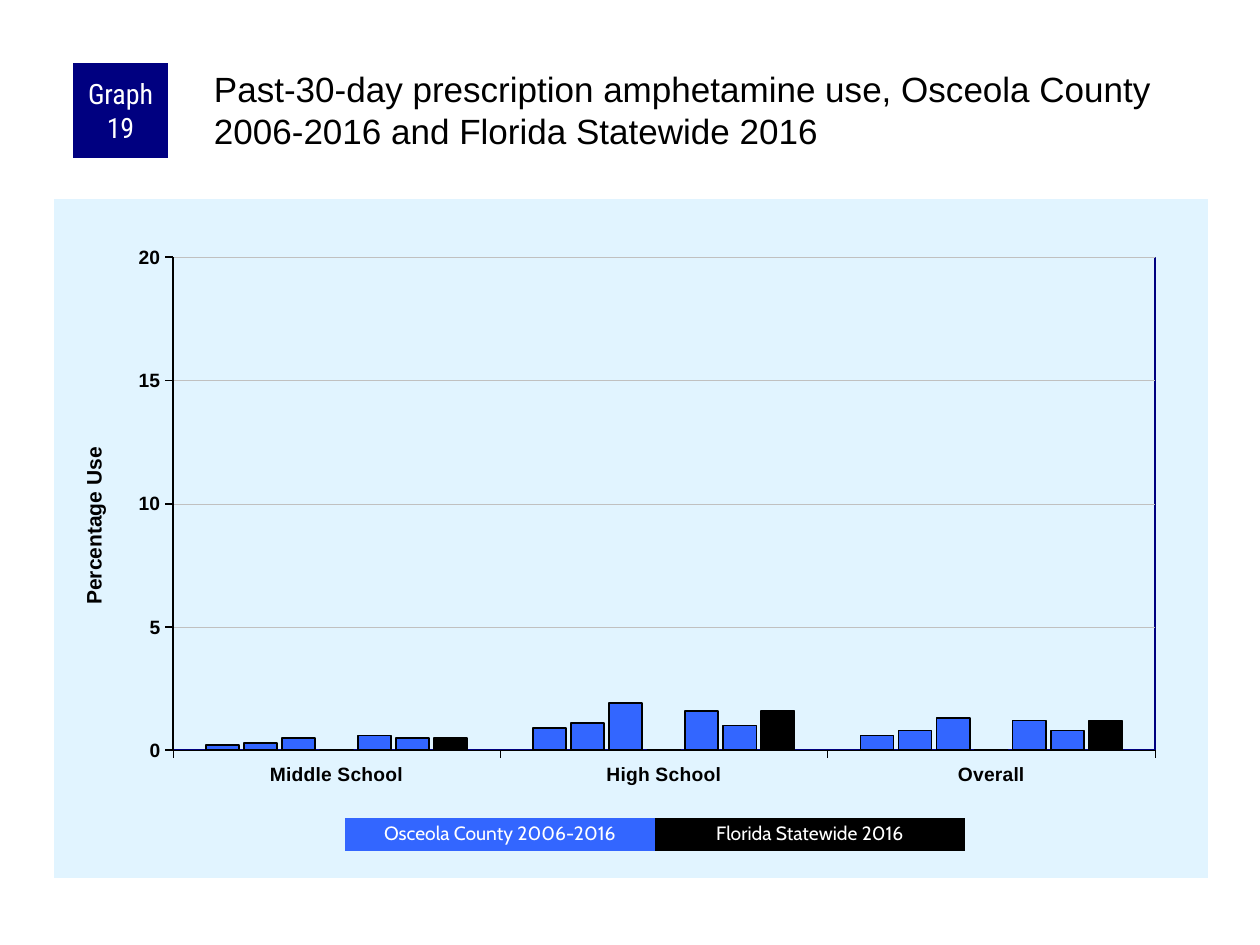
from lxml import etree
from pptx import Presentation
from pptx.chart.data import CategoryChartData
from pptx.dml.color import RGBColor
from pptx.enum.chart import XL_CHART_TYPE, XL_TICK_MARK
from pptx.enum.shapes import MSO_SHAPE
from pptx.enum.text import MSO_ANCHOR, PP_ALIGN
from pptx.oxml import parse_xml
from pptx.oxml.ns import nsdecls, qn
from pptx.util import Pt

COLUMN = XL_CHART_TYPE.COLUMN_CLUSTERED
OUTSIDE = XL_TICK_MARK.OUTSIDE
RECT = MSO_SHAPE.RECTANGLE
MIDDLE = MSO_ANCHOR.MIDDLE
CENTER = PP_ALIGN.CENTER

BLACK = RGBColor(0x00, 0x00, 0x00)
WHITE = RGBColor(0xFF, 0xFF, 0xFF)
NAVY = RGBColor(0x00, 0x00, 0x80)
BLUE = RGBColor(0x33, 0x66, 0xFF)
PALE = RGBColor(0xE1, 0xF4, 0xFF)
GRAY = RGBColor(0xC0, 0xC0, 0xC0)

TITLE = ("Past-30-day prescription amphetamine use, Osceola County "
         "2006-2016 and Florida Statewide 2016")
CATEGORIES = ["Middle School", "High School", "Overall"]
SERIES = [
    ((0.2, 0.9, 0.6), BLUE),
    ((0.3, 1.1, 0.8), BLUE),
    ((0.5, 1.9, 1.3), BLUE),
    ((0, 0, 0), BLUE),
    ((0.6, 1.6, 1.2), BLUE),
    ((0.5, 1.0, 0.8), BLUE),
    ((0.5, 1.6, 1.2), BLACK),
]
LEGEND = [("Osceola County 2006-2016", BLUE), ("Florida Statewide 2016", BLACK)]
LEGEND_LEFT, LEGEND_TOP, LEGEND_W, LEGEND_H = 345, 818, 310, 33

PX = 914400 // 126


def emu(*lengths):
    return [n * PX for n in lengths]


def set_font(font, **values):
    color = values.pop("color", BLACK)
    for name, value in values.items():
        setattr(font, name, value)
    font.color.rgb = color


def set_line(line, color, width):
    line.color.rgb = color
    line.width = Pt(width)


def set_insets(tf, left, top, right, bottom):
    sides = {"left": left, "top": top, "right": right, "bottom": bottom}
    for side, value in sides.items():
        setattr(tf, f"margin_{side}", value * PX)


def add_label(slide, box, text, fill, **font):
    """Add a filled rectangle with centred white text."""
    s = slide.shapes.add_shape(RECT, *emu(*box))
    s.shadow.inherit = False
    s.fill.solid()
    s.fill.fore_color.rgb = fill
    s.line.fill.background()
    tf = s.text_frame
    tf.word_wrap = True
    tf.vertical_anchor = MIDDLE
    p = tf.paragraphs[0]
    p.alignment = CENTER
    r = p.add_run()
    r.text = text
    set_font(r.font, color=WHITE, **font)
    return tf


def layout_xml(target, **values):
    """Build a manual chart layout from fractions of the chart size."""
    layout = parse_xml(f"<c:layout {nsdecls('c')}><c:manualLayout/></c:layout>")
    settings = {"xMode": "edge", "yMode": "edge", **values}
    if target:
        settings = {"layoutTarget": target, **settings}
    for name, value in settings.items():
        etree.SubElement(layout[0], qn(f"c:{name}")).set("val", str(value))
    return layout


def place_plot(plot_area):
    for old in plot_area.findall(qn("c:layout")):
        plot_area.remove(old)
    plot_area.insert(0, layout_xml("inner", x=0.103, y=0.086, w=0.851, h=0.726))
    plot_area.append(parse_xml(
        f"<c:spPr {nsdecls('c', 'a')}><a:noFill/><a:ln w='12700'><a:solidFill>"
        f"<a:srgbClr val='{NAVY}'/></a:solidFill></a:ln></c:spPr>"))


def add_use_chart(slide):
    data = CategoryChartData()
    data.categories = CATEGORIES
    for i, (values, _) in enumerate(SERIES, 1):
        data.add_series(f"Series {i}", values)
    chart = slide.shapes.add_chart(COLUMN, *emu(54, 199, 1154, 679), data).chart
    chart.has_legend = False
    chart.has_title = False
    set_font(chart.font, name="Arial", size=Pt(8))

    plot = chart.plots[0]
    plot.gap_width = 200
    plot.overlap = -15
    plot.vary_by_categories = False
    for series, (_, color) in zip(plot.series, SERIES):
        series.format.fill.solid()
        series.format.fill.fore_color.rgb = color
        series.invert_if_negative = False
        set_line(series.format.line, BLACK, 1)

    for axis, width in ((chart.category_axis, 0.25), (chart.value_axis, 1)):
        axis.major_tick_mark = OUTSIDE
        set_font(axis.tick_labels.font, name="Arial", size=Pt(11), bold=True)
        set_line(axis.format.line, BLACK, width)

    axis = chart.value_axis
    axis.minimum_scale, axis.maximum_scale, axis.major_unit = 0, 20, 5
    axis.tick_labels.number_format = "0"
    axis.tick_labels.number_format_is_linked = False
    set_line(axis.major_gridlines.format.line, GRAY, 0.25)
    title = axis.axis_title
    r = title.text_frame.paragraphs[0].add_run()
    r.text = "Percentage Use"
    set_font(r.font, name="Arial", size=Pt(12), bold=True)
    title_xml = title.text_frame._txBody.getparent().getparent()
    for old in title_xml.findall(qn("c:layout")):
        title_xml.remove(old)
    title_xml.find(qn("c:tx")).addnext(layout_xml(None, x=0.02, y=0.36))

    chart_xml = chart._chartSpace.find(qn("c:chart"))
    place_plot(chart_xml.find(qn("c:plotArea")))
    chart_xml.addnext(parse_xml(
        f"<c:spPr {nsdecls('c', 'a')}><a:solidFill><a:srgbClr val='{PALE}'/>"
        "</a:solidFill><a:ln><a:noFill/></a:ln></c:spPr>"))


def add_title(slide):
    tf = slide.shapes.add_textbox(*emu(210, 63, 998, 105)).text_frame
    tf.word_wrap = True
    set_insets(tf, 4, 4, 0, 0)
    r = tf.paragraphs[0].add_run()
    r.text = TITLE
    set_font(r.font, name="Arial", size=Pt(20))


def main():
    prs = Presentation()
    prs.slide_width, prs.slide_height = emu(1260, 945)
    slide = prs.slides.add_slide(prs.slide_layouts[6])

    add_use_chart(slide)
    tf = add_label(slide, (73, 63, 95, 95), "Graph 19", NAVY,
                   name="Roboto Condensed", size=Pt(16))
    set_insets(tf, 6, 0, 6, 0)
    add_title(slide)
    for i, (text, fill) in enumerate(LEGEND):
        box = (LEGEND_LEFT + i * LEGEND_W, LEGEND_TOP, LEGEND_W, LEGEND_H)
        tf = add_label(slide, box, text, fill, name="Cabin", size=Pt(11))
        tf.paragraphs[0].line_spacing = 0.9

    prs.save("out.pptx")


if __name__ == "__main__":
    main()
